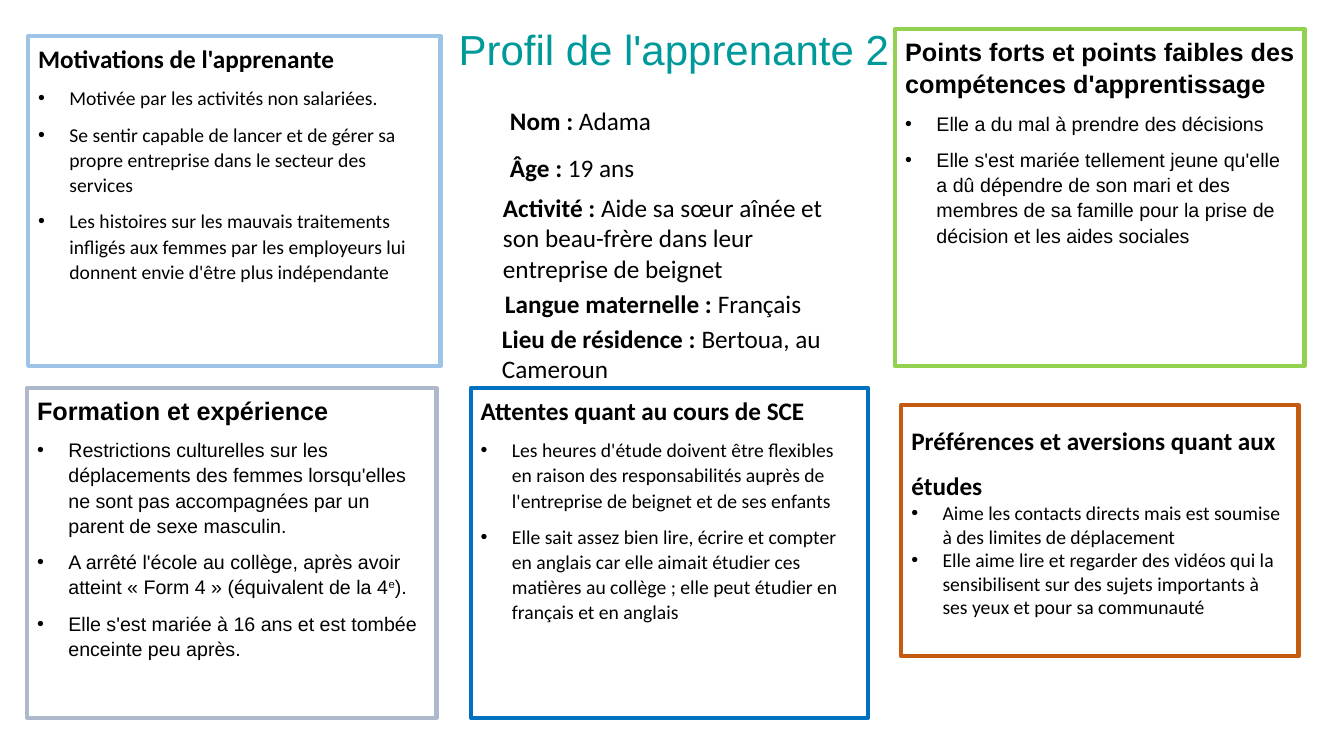
from dataclasses import dataclass
from lxml.etree import SubElement as Sub
from pptx import Presentation
from pptx.dml.color import RGBColor as RGB
from pptx.enum.shapes import MSO_SHAPE as Shape
from pptx.enum.text import MSO_ANCHOR as Anchor, PP_ALIGN as Align
from pptx.oxml.ns import qn
from pptx.util import Inches, Pt


@dataclass(frozen=True)
class Theme:
    ink: str = "000000"
    paper: str = "FFFFFF"
    teal: str = "009999"
    blue: str = "0070C0"
    sky: str = "9DC3E6"
    green: str = "92D050"
    gray: str = "ADB9CA"
    rust: str = "C55A11"
    title: int = 30
    head: int = 18
    body: int = 14


theme = Theme()
SANS, CAL = "Arial", "Calibri"


def write(par, text, size=theme.head, face=CAL, color=theme.ink, bold=False, raised=False):
    run = par.add_run()
    run.text = text
    font = run.font
    font.size, font.name, font.bold = Pt(size), face, bold
    font.color.rgb = RGB.from_string(color)
    if raised:
        run._r.get_or_add_rPr().set("baseline", "30000")


def bullet(par):
    props = par._p.get_or_add_pPr()
    props.set("marL", str(Inches(0.31)))
    props.set("indent", str(Inches(-0.31)))
    Sub(props, qn("a:buFont"), typeface="Arial")
    Sub(props, qn("a:buChar"), char="•")


deck = Presentation()
deck.slide_width, deck.slide_height = Inches(13.33), Inches(7.5)
slide = deck.slides.add_slide(deck.slide_layouts[6])

cards = [
    ((4.67, 3.85, 3.94, 3.27), theme.blue, CAL, "Attentes quant au cours de SCE", [
        "Les heures d'étude doivent être flexibles en raison des responsabilités auprès de l'entreprise de beignet et de ses enfants",
        "Elle sait assez bien lire, écrire et compter en anglais car elle aimait étudier ces matières au collège ; elle peut étudier en français et en anglais",
    ]),
    ((0.28, 0.36, 4.09, 3.27), theme.sky, CAL, "Motivations de l'apprenante", [
        "Motivée par les activités non salariées.",
        "Se sentir capable de lancer et de gérer sa propre entreprise dans le secteur des services",
        "Les histoires sur les mauvais traitements infligés aux femmes par les employeurs lui donnent envie d'être plus indépendante",
    ]),
    ((8.88, 0.29, 4.06, 3.34), theme.green, SANS, "Points forts et points faibles des compétences d'apprentissage", [
        "Elle a du mal à prendre des décisions",
        "Elle s'est mariée tellement jeune qu'elle a dû dépendre de son mari et des membres de sa famille pour la prise de décision et les aides sociales",
    ]),
    ((0.27, 3.85, 4.06, 3.27), theme.gray, SANS, "Formation et expérience", [
        "Restrictions culturelles sur les déplacements des femmes lorsqu'elles ne sont pas accompagnées par un parent de sexe masculin.",
        "A arrêté l'école au collège, après avoir atteint « Form 4 » (équivalent de la 4^e^).",
        "Elle s'est mariée à 16 ans et est tombée enceinte peu après.",
    ]),
    ((8.94, 4.02, 3.94, 2.49), theme.rust, CAL, "Préférences et aversions quant aux études", [
        "Aime les contacts directs mais est soumise à des limites de déplacement",
        "Elle aime lire et regarder des vidéos qui la sensibilisent sur des sujets importants à ses yeux et pour sa communauté",
    ]),
]
for place, color, face, head, points in cards:
    card = slide.shapes.add_shape(Shape.RECTANGLE, *map(Inches, place))
    card.shadow.inherit = False
    card.line.color.rgb = RGB.from_string(color)
    card.line.width = Pt(3)
    tight = color == theme.rust
    if tight:
        card.fill.background()
    else:
        card.fill.solid()
        card.fill.fore_color.rgb = RGB.from_string(theme.paper)
    frame = card.text_frame
    frame.word_wrap = True
    frame.vertical_anchor = Anchor.TOP
    for row, text in enumerate([head, *points]):
        par = frame.add_paragraph() if row else frame.paragraphs[0]
        par.alignment = Align.LEFT
        par.space_after = Pt(0 if tight else 8)
        par.line_spacing = 1.07
        if tight:
            par.line_spacing = 1.0 if row else 1.5
        if row:
            bullet(par)
        for part, piece in enumerate(text.split("^")):
            write(par, piece, size=theme.body if row else theme.head,
                  face=face, bold=not row, raised=part % 2 == 1)

facts = [
    ((4.96, 1, 3.76, 0.4), "Nom :", " Adama"),
    ((4.96, 1.46, 3.17, 0.4), "Âge :", " 19 ans"),
    ((4.89, 1.86, 3.45, 1.01), "Activité :", " Aide sa sœur aînée et son beau-frère dans leur entreprise de beignet"),
    ((4.91, 2.81, 3.45, 0.4), "Langue maternelle :", " Français"),
    ((4.88, 3.16, 3.45, 0.4), "Lieu de résidence :", " Bertoua, au Cameroun"),
]
for place, label, value in facts:
    frame = slide.shapes.add_textbox(*map(Inches, place)).text_frame
    frame.word_wrap = True
    write(frame.paragraphs[0], label, bold=True)
    write(frame.paragraphs[0], value)

frame = slide.shapes.add_textbox(*map(Inches, (4.45, 0.24, 4.51, 0.56))).text_frame
frame.word_wrap = False
par = frame.paragraphs[0]
par.line_spacing = 0.9
par.space_before = Pt(10)
write(par, "Profil de l'apprenante 2", size=theme.title, face=SANS, color=theme.teal)

deck.save("out.pptx")
